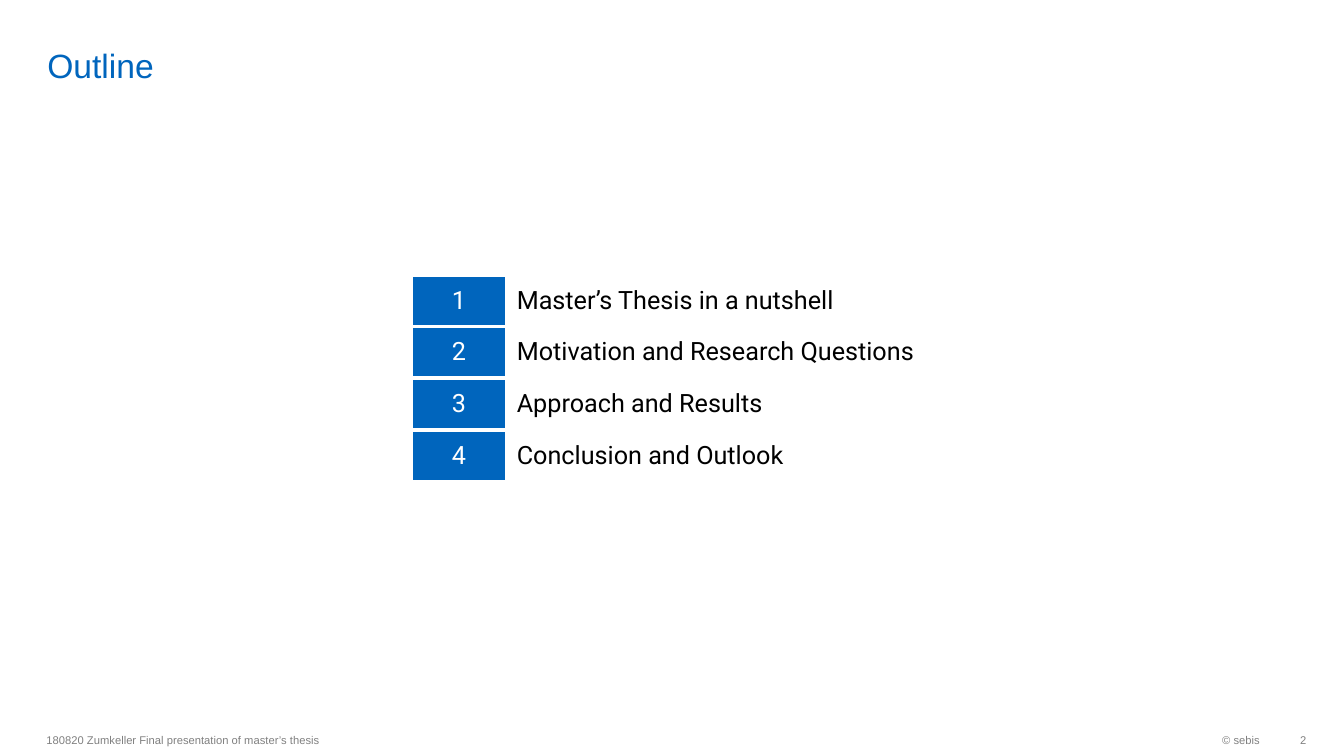
from lxml.etree import SubElement
from pptx import Presentation
from pptx.dml.color import RGBColor
from pptx.enum.text import MSO_ANCHOR, PP_ALIGN
from pptx.oxml import parse_xml
from pptx.oxml.ns import nsdecls
from pptx.util import Cm, Pt

BLUE, GRAY, WHITE, BLACK = "0065BD", "808080", "FFFFFF", "000000"


def style(p, font, size, color, align=PP_ALIGN.LEFT):
    p.alignment = align
    p.font.name = font
    p.font.size = Pt(size)
    p.font.color.rgb = RGBColor.from_string(color)


def add_borders(cell, color, width):
    """Draw the same solid line on all four sides of a table cell."""
    tcPr = cell._tc.get_or_add_tcPr()
    for i, side in enumerate("LRTB"):
        tcPr.insert(i, parse_xml(
            f'<a:ln{side} {nsdecls("a")} w="{Pt(width)}"><a:solidFill>'
            f'<a:srgbClr val="{color}"/></a:solidFill></a:ln{side}>'))


prs = Presentation()
prs.slide_width, prs.slide_height = Cm(33.87), Cm(19.05)
s = prs.slides.add_slide(prs.slide_layouts[5])

# Title
title = s.shapes.title
title.left, title.top, title.width, title.height = Cm(0.94), Cm(0.13), Cm(29.41), Cm(2.01)
tf = title.text_frame
tf.text = "Outline"
tf.vertical_anchor = MSO_ANCHOR.BOTTOM
tf.margin_top = tf.margin_bottom = 0
style(tf.paragraphs[0], "Arial", 24, BLUE)

# Agenda table
topics = [
    "Master’s Thesis in a nutshell",
    "Motivation and Research Questions",
    "Approach and Results",
    "Conclusion and Outlook",
]
row_height = Cm(1.3)
frame = s.shapes.add_table(len(topics), 2, Cm(10.36), Cm(6.93),
                           Cm(13.13), row_height * len(topics))
agenda = frame.table
agenda.first_row = agenda.horz_banding = False
agenda.columns[0].width, agenda.columns[1].width = Cm(2.41), Cm(10.72)
for row, topic in enumerate(topics):
    number_cell, topic_cell = agenda.cell(row, 0), agenda.cell(row, 1)
    number_cell.text, topic_cell.text = str(row + 1), topic
    number_cell.fill.solid()
    number_cell.fill.fore_color.rgb = RGBColor.from_string(BLUE)
    topic_cell.fill.background()
    style(number_cell.text_frame.paragraphs[0], "Roboto", 18, WHITE, PP_ALIGN.CENTER)
    style(topic_cell.text_frame.paragraphs[0], "Roboto", 18, BLACK)
    for cell in (number_cell, topic_cell):
        cell.vertical_anchor = MSO_ANCHOR.MIDDLE
        add_borders(cell, WHITE, 3)

# Footer: text, left, width, right margin, alignment
footers = [
    ("180820 Zumkeller Final presentation of master’s thesis", 0.92, 16, 0.25, PP_ALIGN.LEFT),
    ("© sebis", 26.06, 5.94, 0.25, PP_ALIGN.RIGHT),
    ("2", 32, 0.92, 0, PP_ALIGN.RIGHT),
]
for text, left, width, margin_right, align in footers:
    tf = s.shapes.add_textbox(Cm(left), Cm(18.25), Cm(width), Cm(0.81)).text_frame
    tf.text = text
    tf.word_wrap = True
    tf.vertical_anchor = MSO_ANCHOR.MIDDLE
    tf.margin_right = Cm(margin_right)
    style(tf.paragraphs[0], "Arial", 8, GRAY, align)

prs.save("out.pptx")
